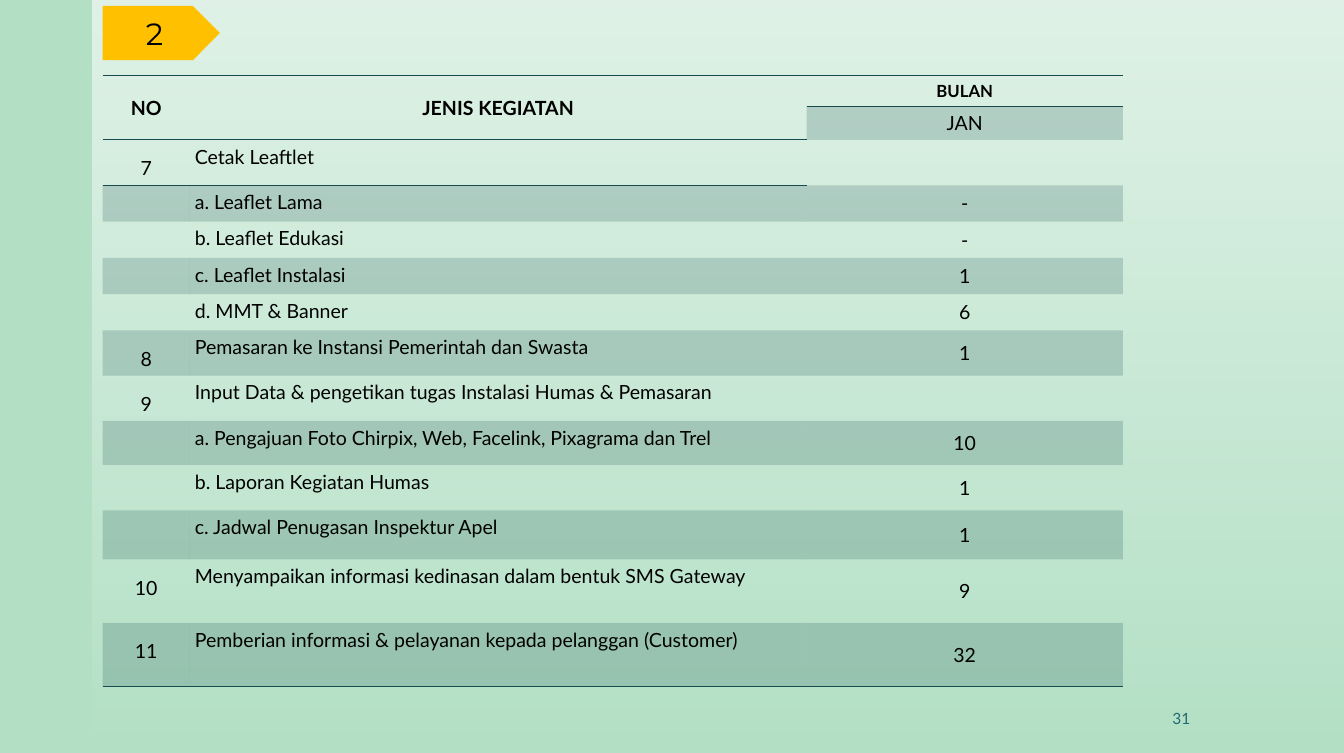
from typing import NamedTuple

from lxml import etree
from pptx import Presentation
from pptx.dml.color import RGBColor
from pptx.enum.shapes import MSO_SHAPE
from pptx.enum.text import MSO_ANCHOR, PP_ALIGN
from pptx.oxml.ns import qn
from pptx.util import Pt

LEFT, CENTER, RIGHT = PP_ALIGN.LEFT, PP_ALIGN.CENTER, PP_ALIGN.RIGHT
TOP, MIDDLE = MSO_ANCHOR.TOP, MSO_ANCHOR.MIDDLE
RECTANGLE, PENTAGON = MSO_SHAPE.RECTANGLE, MSO_SHAPE.PENTAGON

MINT, AMBER, TEAL = "B3E0C5", "FFC000", "164B4F"
BLACK, WHITE, NUMBER_TEAL = "000000", "FFFFFF", "1F696F"
BODY_FONT, BADGE_FONT = "Lato", "Montserrat"
NO_TABLE_STYLE = "{2D5ABB26-0587-4C30-8999-92F81FD0307C}"
SLIDE_WIDTH, SLIDE_HEIGHT = 964.08, 540
TABLE_LEFT, TABLE_TOP = 73.6, 54.4
COLUMN_WIDTHS = (62.6, 442.4, 227)
HEADER_HEIGHTS = (21.9, 23.6)
CELL_MARGIN = 3.6


class Activity(NamedTuple):
    number: str
    name: str
    january: str
    height: float


ACTIVITIES = [
    Activity("7", "Cetak Leaftlet", "", 32.6),
    Activity("", "a. Leaflet Lama", "-", 26),
    Activity("", "b. Leaflet Edukasi", "-", 26),
    Activity("", "c. Leaflet Instalasi", "1", 26),
    Activity("", "d. MMT & Banner", "6", 26),
    Activity("8", "Pemasaran ke Instansi Pemerintah dan Swasta", "1", 32.4),
    Activity("9", "Input Data & pengetikan tugas Instalasi Humas & Pemasaran", "", 32.4),
    Activity("", "a. Pengajuan Foto Chirpix, Web, Facelink, Pixagrama dan Trel", "10", 31.6),
    Activity("", "b. Laporan Kegiatan Humas", "1", 32.7),
    Activity("", "c. Jadwal Penugasan Inspektur Apel", "1", 35.2),
    Activity("10", "Menyampaikan informasi kedinasan dalam bentuk SMS Gateway", "9", 45.5),
    Activity("11", "Pemberian informasi & pelayanan kepada pelanggan (Customer)", "32", 45.5),
]


def color(value: str) -> RGBColor:
    return RGBColor.from_string(value)


def write(frame, text: str, size: float, align, font: str = BODY_FONT,
          ink: str = BLACK, bold: bool = False, spacing: float = 1) -> None:
    paragraph = frame.paragraphs[0]
    paragraph.text = text
    paragraph.alignment = align
    paragraph.line_spacing = spacing
    for run in paragraph.runs:
        run.font.name = font
        run.font.size = Pt(size)
        run.font.bold = bold
        run.font.color.rgb = color(ink)
    if not text:  # keeps an empty cell from stretching its row
        paragraph._p.get_or_add_endParaRPr().set("sz", str(int(size * 100)))


def set_alpha(srgb, percent: int) -> None:
    etree.SubElement(srgb, qn("a:alpha")).set("val", str(percent * 1000))


def add_panel(shapes, preset, left: float, top: float, width: float, height: float):
    panel = shapes.add_shape(preset, Pt(left), Pt(top), Pt(width), Pt(height))
    panel.shadow.inherit = False
    panel.line.fill.background()
    return panel


def rule_cell(cell, edges: str) -> None:
    """Draw thin teal lines on the edges given as T and B, in that order."""
    properties = cell._tc.get_or_add_tcPr()
    for edge in edges:
        line = etree.SubElement(properties, qn(f"a:ln{edge}"), w=str(Pt(1)))
        fill = etree.SubElement(line, qn("a:solidFill"))
        etree.SubElement(fill, qn("a:srgbClr"), val=TEAL)


def style_cell(cell, text: str, align=CENTER, anchor=MIDDLE, size: float = 14,
               bold: bool = False, spacing: float = 1,
               edges: str = "", shaded: bool = False) -> None:
    cell.margin_left = cell.margin_right = Pt(CELL_MARGIN)
    cell.margin_top = cell.margin_bottom = Pt(CELL_MARGIN)
    cell.vertical_anchor = anchor
    write(cell.text_frame, text, size, align, bold=bold, spacing=spacing)
    rule_cell(cell, edges)
    if shaded:
        cell.fill.solid()
        cell.fill.fore_color.rgb = color(TEAL)
        set_alpha(cell._tc.tcPr.find(qn("a:solidFill")).find(qn("a:srgbClr")), 20)
    else:
        cell.fill.background()


def add_activity_table(shapes) -> None:
    heights = [*HEADER_HEIGHTS, *(activity.height for activity in ACTIVITIES)]
    table = shapes.add_table(
        len(heights), len(COLUMN_WIDTHS), Pt(TABLE_LEFT), Pt(TABLE_TOP),
        Pt(sum(COLUMN_WIDTHS)), Pt(sum(heights))).table
    table._tbl.tblPr.find(qn("a:tableStyleId")).text = NO_TABLE_STYLE
    for column, width in zip(table.columns, COLUMN_WIDTHS):
        column.width = Pt(width)
    for row, height in zip(table.rows, heights):
        row.height = Pt(height)

    # Header
    for column, heading in enumerate(("NO", "JENIS KEGIATAN")):
        style_cell(table.cell(0, column), heading, bold=True, edges="TB")
        style_cell(table.cell(1, column), "")
        table.cell(0, column).merge(table.cell(1, column))
    style_cell(table.cell(0, 2), "BULAN", size=12, bold=True, edges="TB")
    style_cell(table.cell(1, 2), "JAN", shaded=True)

    # Activities
    for index, activity in enumerate(ACTIVITIES):
        row = index + len(HEADER_HEIGHTS)
        shaded = index % 2 == 1
        bottom = "B" if activity is ACTIVITIES[-1] else ""
        edges = "T" if index == 0 else bottom
        style_cell(table.cell(row, 0), activity.number, anchor=TOP,
                   spacing=1.5 if activity.number else 1, edges=edges, shaded=shaded)
        style_cell(table.cell(row, 1), activity.name, LEFT, TOP,
                   edges=edges, shaded=shaded)
        style_cell(table.cell(row, 2), activity.january, edges=bottom, shaded=shaded)
        if activity.number == "9":
            table.cell(row, 1).merge(table.cell(row, 2))


def add_background(slide) -> None:
    slide.background.fill.solid()
    slide.background.fill.fore_color.rgb = color(MINT)
    left = 66.2
    glow = add_panel(slide.shapes, RECTANGLE, left, 0, SLIDE_WIDTH - left, SLIDE_HEIGHT)
    glow.fill.gradient()
    glow.fill.gradient_angle = 270
    for stop, position, opacity in zip(glow.fill.gradient_stops, (0, 1), (60, 0)):
        stop.position = position
        stop.color.rgb = color(WHITE)
    gradient = glow._element.spPr.find(qn("a:gradFill"))
    for srgb, opacity in zip(gradient.iter(qn("a:srgbClr")), (60, 0)):
        set_alpha(srgb, opacity)


def main() -> None:
    presentation = Presentation()
    presentation.slide_width = Pt(SLIDE_WIDTH)
    presentation.slide_height = Pt(SLIDE_HEIGHT)
    slide = presentation.slides.add_slide(presentation.slide_layouts[6])
    add_background(slide)

    # Page number
    page_number = slide.shapes.add_textbox(Pt(636.5), Pt(500.4), Pt(224.6), Pt(28.8))
    page_number.text_frame.word_wrap = True
    page_number.text_frame.vertical_anchor = MIDDLE
    write(page_number.text_frame, "31", 11.1, RIGHT, ink=NUMBER_TEAL)

    add_activity_table(slide.shapes)

    # Section badge
    badge = add_panel(slide.shapes, PENTAGON, TABLE_LEFT, 4.3, 84.2, 38.9)
    badge.fill.solid()
    badge.fill.fore_color.rgb = color(AMBER)
    badge.text_frame.vertical_anchor = MIDDLE
    write(badge.text_frame, "2", 22, CENTER, font=BADGE_FONT)

    presentation.save("out.pptx")


if __name__ == "__main__":
    main()
